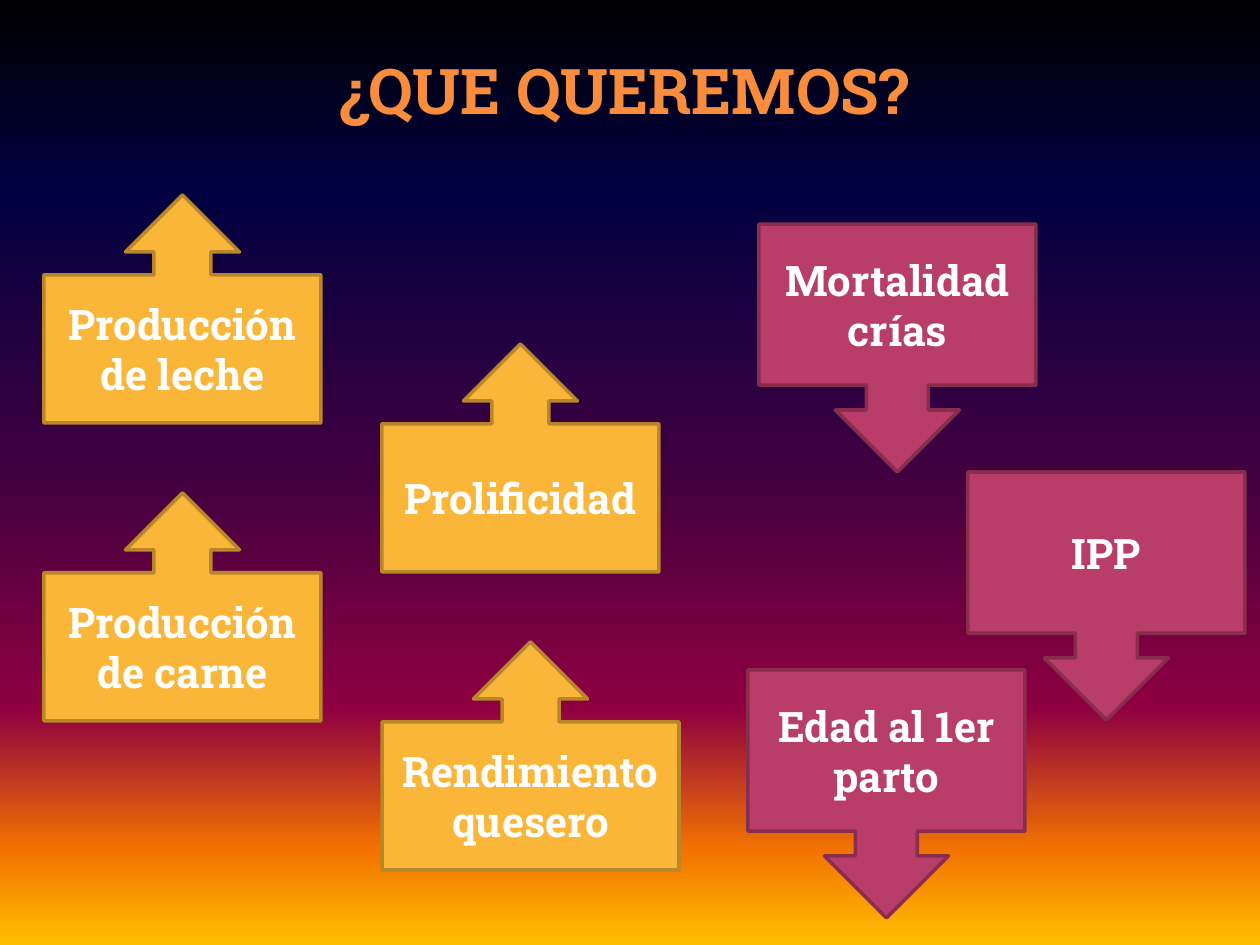
import copy

import pptx
import pptx.dml.color
import pptx.enum.shapes
import pptx.enum.text
import pptx.util

SCALE = 914400 / 126
FONT = "Roboto Slab"
SHAPES = pptx.enum.shapes.MSO_SHAPE
ANCHOR = pptx.enum.text.MSO_ANCHOR


def px(length):
    return pptx.util.Emu(round(length * SCALE))


def rgb(value):
    return pptx.dml.color.RGBColor.from_string(value)


def write(tf, text, size=24, color="FFFFFF", bold=True, anchor=ANCHOR.MIDDLE):
    tf.word_wrap = True
    tf.vertical_anchor = anchor
    p = tf.paragraphs[0]
    p.alignment = pptx.enum.text.PP_ALIGN.CENTER
    r = p.add_run()
    r.text = text
    r.font.name = FONT
    r.font.size = pptx.util.Pt(size)
    r.font.bold = bold
    r.font.color.rgb = rgb(color)


class Deck:
    def __init__(self, width, height):
        self.prs = pptx.Presentation()
        self.prs.slide_width = px(width)
        self.prs.slide_height = px(height)
        self.s = self.prs.slides.add_slide(self.prs.slide_layouts[6])

    def background(self, stops):
        fill = self.s.background.fill
        fill.gradient()
        fill.gradient_angle = 270
        gs_list = self.s.element.xpath(".//a:gsLst")[0]
        for _ in range(len(stops) - len(gs_list)):
            gs_list.append(copy.deepcopy(gs_list[0]))
        for stop, (percent, color) in zip(fill.gradient_stops, stops):
            stop.position = percent / 100
            stop.color.rgb = rgb(color)

    def title(self, text, left, top, width, height):
        sp = self.s.shapes.add_textbox(px(left), px(top), px(width), px(height))
        write(sp.text_frame, text, size=36, color="FA8D3D", anchor=ANCHOR.TOP)

    def callout(self, kind, text, left, top, width, height, fill, line):
        sp = self.s.shapes.add_shape(kind, px(left), px(top), px(width), px(height))
        sp.shadow.inherit = False
        sp.fill.solid()
        sp.fill.fore_color.rgb = rgb(fill)
        sp.line.color.rgb = rgb(line)
        sp.line.width = pptx.util.Pt(2)
        write(sp.text_frame, text)

    def increase(self, text, left, top, width=277):
        self.callout(SHAPES.UP_ARROW_CALLOUT, text, left, top, width, 228, "F9B639", "B8872A")

    def decrease(self, text, left, top):
        self.callout(SHAPES.DOWN_ARROW_CALLOUT, text, left, top, 277, 248, "B83D68", "882D4D")


def main():
    deck = Deck(1260, 945)
    deck.background([(0, "000000"), (20, "000040"), (50, "400040"),
                     (75, "8F0040"), (90, "F27300"), (100, "FFBF00")])
    deck.title("¿QUE QUEREMOS?", 292, 45, 665, 89)

    first_top, step = 195, 149
    left_column, middle_column = 44, 382
    deck.increase("Producción de leche", left_column, first_top)
    deck.increase("Producción de carne", left_column, first_top + 2 * step)
    deck.increase("Prolificidad", middle_column, first_top + step)
    deck.increase("Rendimiento quesero", middle_column, first_top + 3 * step, width=297)

    deck.decrease("Mortalidad crías", 759, 224)
    deck.decrease("IPP", 968, 472)
    deck.decrease("Edad al 1er parto", 748, 670)
    deck.prs.save("out.pptx")


if __name__ == "__main__":
    main()
